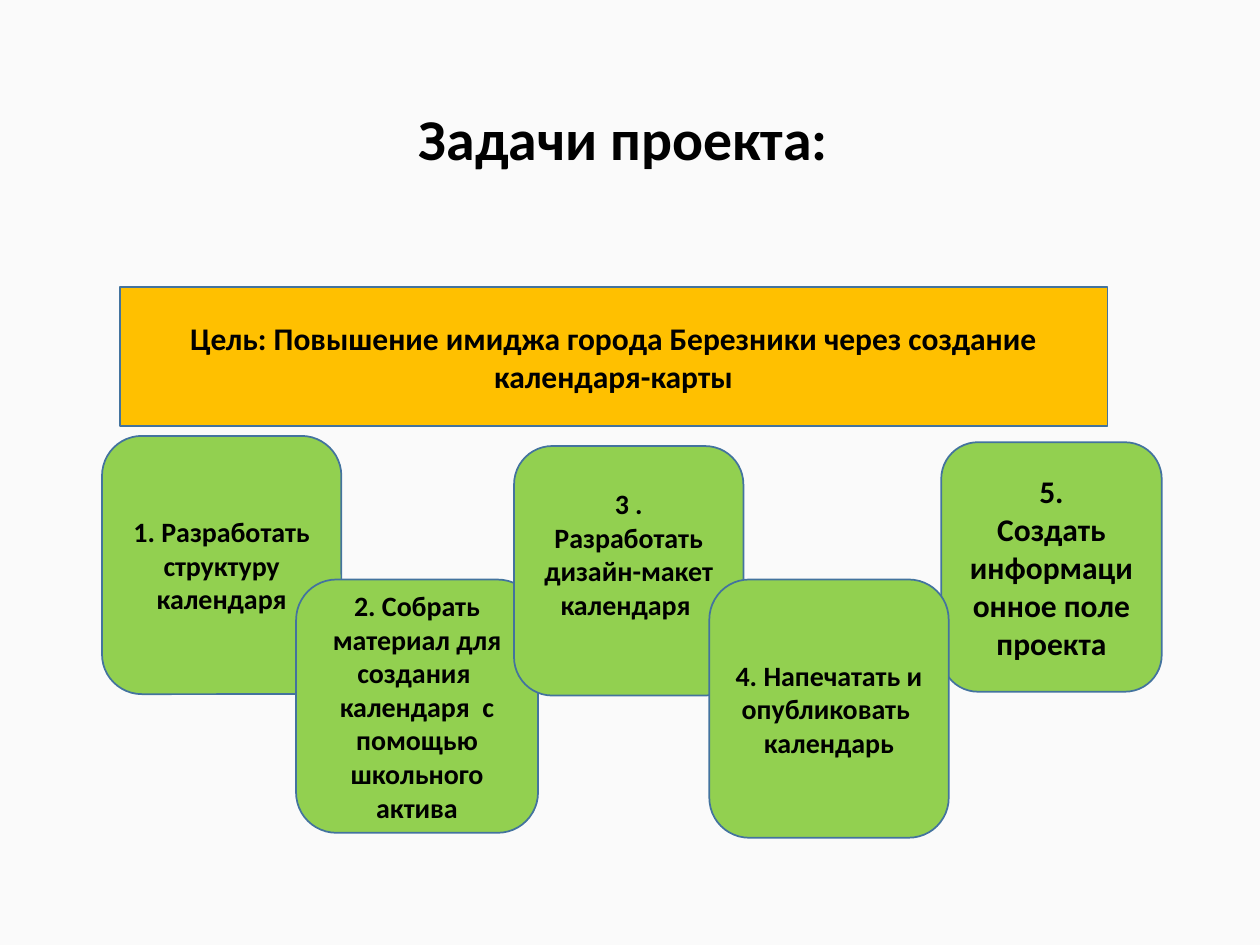
from dataclasses import dataclass

from pptx import Presentation
from pptx.dml.color import RGBColor
from pptx.enum.shapes import MSO_SHAPE
from pptx.enum.text import MSO_ANCHOR, PP_ALIGN
from pptx.util import Inches, Pt

RECTANGLE = MSO_SHAPE.RECTANGLE
ROUNDED = MSO_SHAPE.ROUNDED_RECTANGLE
MIDDLE = MSO_ANCHOR.MIDDLE
CENTER = PP_ALIGN.CENTER

SLIDE_WIDTH = Inches(10)
SLIDE_HEIGHT = Inches(7.5)
FONT = "Calibri"
PAPER, INK, OUTLINE = "FAFAFA", "000000", "43739E"
AMBER, GREEN = "FFC000", "92D050"


@dataclass(frozen=True)
class Area:
    """Place and size in percent of the slide."""
    left: float
    top: float
    width: float
    height: float

    def lengths(self) -> tuple[int, int, int, int]:
        return (int(SLIDE_WIDTH * self.left / 100),
                int(SLIDE_HEIGHT * self.top / 100),
                int(SLIDE_WIDTH * self.width / 100),
                int(SLIDE_HEIGHT * self.height / 100))


@dataclass(frozen=True)
class Card:
    area: Area
    lines: tuple[str, ...]
    size: int = 16
    fill: str = GREEN
    outline: int = ROUNDED
    bottom: float = 0.05  # inner margin in inches


TITLE_AREA = Area(6.9, 5.33, 86.2, 19.33)

GOAL = Card(Area(9.5, 30.4, 78.4, 14.67),
            ("Цель: Повышение имиджа города Березники через создание календаря-карты",),
            size=18, fill=AMBER, outline=RECTANGLE)

# Back to front: the fourth task overlaps its two neighbours
TASKS = (
    Card(Area(8.1, 46.13, 19, 27.33), ("1. Разработать структуру календаря",)),
    Card(Area(23.5, 61.33, 19.2, 26.8),
         ("2. Собрать материал для создания  календаря  с помощью школьного актива",)),
    Card(Area(40.8, 47.2, 18.2, 26.4),
         ("3 . Разработать дизайн-макет календаря ",), bottom=0.32),
    Card(Area(74.7, 46.8, 17.5, 26.4),
         ("5.", "Создать информационное поле проекта"), size=18),
    Card(Area(56.3, 61.33, 19, 27.33),
         ("4. Напечатать и опубликовать  календарь",)),
)


def color(code: str) -> RGBColor:
    return RGBColor.from_string(code)


def write(box, lines: tuple[str, ...], size: int, spacing: float = 1.0) -> None:
    """Fill a shape with bold, centred paragraphs."""
    frame = box.text_frame
    frame.word_wrap = True
    frame.vertical_anchor = MIDDLE
    frame.text = "\n".join(lines)
    for para in frame.paragraphs:
        para.alignment = CENTER
        para.line_spacing = spacing
        para.font.name = FONT
        para.font.size = Pt(size)
        para.font.bold = True
        para.font.color.rgb = color(INK)


def draw_card(page, card: Card) -> None:
    box = page.shapes.add_shape(card.outline, *card.area.lengths())
    box.shadow.inherit = False
    box.fill.solid()
    box.fill.fore_color.rgb = color(card.fill)
    box.line.color.rgb = color(OUTLINE)
    box.line.width = Pt(1)
    write(box, card.lines, card.size)
    box.text_frame.margin_bottom = Inches(card.bottom)


def main() -> None:
    deck = Presentation()
    deck.slide_width, deck.slide_height = SLIDE_WIDTH, SLIDE_HEIGHT
    page = deck.slides.add_slide(deck.slide_layouts[6])
    page.background.fill.solid()
    page.background.fill.fore_color.rgb = color(PAPER)

    # Title
    title = page.shapes.add_textbox(*TITLE_AREA.lengths())
    write(title, ("Задачи проекта: ",), 33, spacing=0.9)

    # Goal banner and task cards
    for card in (GOAL, *TASKS):
        draw_card(page, card)

    deck.save("out.pptx")


if __name__ == "__main__":
    main()
